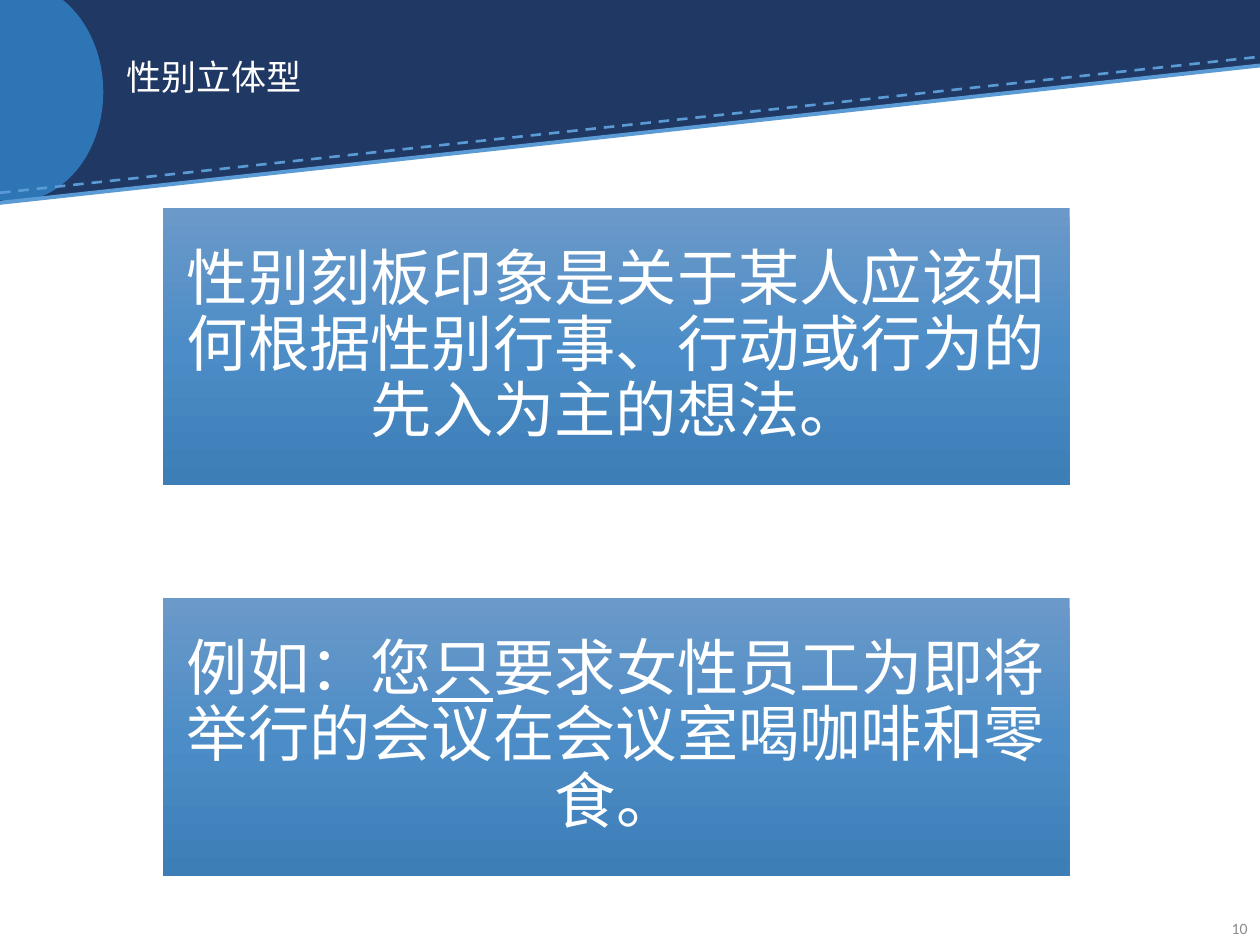
import copy
from dataclasses import dataclass

import pptx
import pptx.dml.color
import pptx.enum.dml
import pptx.enum.shapes
import pptx.enum.text
import pptx.oxml.ns
import pptx.util
from lxml import etree

Inches = pptx.util.Inches
Kind = pptx.enum.shapes.MSO_SHAPE
Align = pptx.enum.text.PP_ALIGN
Anchor = pptx.enum.text.MSO_ANCHOR
qn = pptx.oxml.ns.qn


@dataclass(frozen=True)
class Theme:
    navy: str = "203864"
    blue: str = "2E75B6"
    sky: str = "5B9BD5"
    white: str = "FFFFFF"
    gray: str = "8C8C8C"
    shades: tuple = ("6B99C9", "4D8DC7", "3E7EB7")
    font: str = "Noto Sans CJK SC"
    latin: str = "Calibri"
    title: float = 20
    body: float = 35
    small: float = 9


@dataclass(frozen=True)
class Box:
    left: float
    top: float
    width: float
    height: float

    def sides(self) -> tuple:
        return tuple(Inches(v) for v in (self.left, self.top, self.width, self.height))


@dataclass(frozen=True)
class Block:
    kind: int
    box: Box
    color: str
    flip: bool = False


@dataclass(frozen=True)
class Rule:
    start: float
    end: float
    weight: float
    dashed: bool = False


@dataclass(frozen=True)
class Panel:
    top: float
    words: tuple
    marked: str = ""


THEME = Theme()

BLOCKS = (
    Block(Kind.RECTANGLE, Box(0, 0, 10, 0.52), THEME.navy),
    Block(Kind.RIGHT_TRIANGLE, Box(0, 0.51, 10, 1.09), THEME.navy, True),
    Block(Kind.OVAL, Box(-0.59, -0.14, 1.41, 1.74), THEME.blue),
)
RULES = (Rule(1.53, 0.45, 1.5, True), Rule(1.61, 0.52, 2.25))
PANELS = (
    Panel(1.65, ("性别刻板印象是关于某人应该如何根据性别行事、行动或行为的先入为主的想法。",)),
    Panel(4.75, ("例如：您", "只", "要求女性员工为即将举行的会议在会议室喝咖啡和零食。"), "只"),
)


def paint(text: str) -> pptx.dml.color.RGBColor:
    return pptx.dml.color.RGBColor.from_string(text)


def style(run, size: float, color: str, face: str = THEME.font) -> None:
    run.font.size = pptx.util.Pt(size)
    run.font.color.rgb = paint(color)
    run.font.name = face
    etree.SubElement(run.font._element, qn("a:ea")).set("typeface", face)


def add_block(slide, block: Block) -> None:
    shape = slide.shapes.add_shape(block.kind, *block.box.sides())
    shape.shadow.inherit = False
    shape.fill.solid()
    shape.fill.fore_color.rgb = paint(block.color)
    shape.line.fill.background()
    if block.flip:
        shape.element.spPr.find(qn("a:xfrm")).set("flipV", "1")


def add_rule(slide, rule: Rule) -> None:
    line = slide.shapes.add_connector(
        pptx.enum.shapes.MSO_CONNECTOR.STRAIGHT,
        Inches(0), Inches(rule.start), Inches(10), Inches(rule.end))
    line.line.color.rgb = paint(THEME.sky)
    line.line.width = pptx.util.Pt(rule.weight)
    if rule.dashed:
        line.line.dash_style = pptx.enum.dml.MSO_LINE.DASH
    etree.SubElement(line.element.spPr, qn("a:effectLst"))


def shade(fill) -> None:
    fill.gradient()
    fill.gradient_angle = 270
    first = fill.gradient_stops[0]._gs
    first.addnext(copy.deepcopy(first))
    for stop, color, place in zip(fill.gradient_stops, THEME.shades, (0, 0.5, 1)):
        stop.color.rgb = paint(color)
        stop.position = place


def add_panel(slide, panel: Panel) -> None:
    box = Box(1.29, panel.top, 7.2, 2.2)
    shape = slide.shapes.add_shape(Kind.RECTANGLE, *box.sides())
    shape.shadow.inherit = False
    shape.line.fill.background()
    shade(shape.fill)
    frame = shape.text_frame
    frame.word_wrap = True
    frame.vertical_anchor = Anchor.MIDDLE
    frame.margin_left = frame.margin_right = Inches(0.02)
    frame.margin_top = frame.margin_bottom = Inches(0.02)
    para = frame.paragraphs[0]
    para.alignment = Align.CENTER
    para.line_spacing = 0.9
    for word in panel.words:
        run = para.add_run()
        run.text = word
        style(run, THEME.body, THEME.white)
        if word == panel.marked:
            run.font.underline = True


def set_title(slide, text: str) -> None:
    title = slide.shapes.title
    title.left, title.top, title.width, title.height = Box(0.9, 0.2, 8.05, 0.86).sides()
    frame = title.text_frame
    frame.text = text
    frame.word_wrap = True
    frame.auto_size = pptx.enum.text.MSO_AUTO_SIZE.NONE
    frame.vertical_anchor = Anchor.MIDDLE
    para = frame.paragraphs[0]
    para.alignment = Align.LEFT
    para.line_spacing = 0.9
    style(para.runs[0], THEME.title, THEME.white)
    slide.shapes.element.append(title.element)


def add_number(slide, text: str) -> None:
    label = slide.shapes.add_textbox(*Box(9.47, 7.17, 0.53, 0.4).sides())
    frame = label.text_frame
    frame.text = text
    frame.word_wrap = True
    frame.vertical_anchor = Anchor.MIDDLE
    para = frame.paragraphs[0]
    para.alignment = Align.RIGHT
    para.space_after = pptx.util.Pt(6)
    style(para.runs[0], THEME.small, THEME.gray, THEME.latin)


def main() -> None:
    deck = pptx.Presentation()
    deck.slide_width, deck.slide_height = Inches(10), Inches(7.5)
    slide = deck.slides.add_slide(deck.slide_layouts[5])
    for block in BLOCKS:
        add_block(slide, block)
    for rule in RULES:
        add_rule(slide, rule)
    set_title(slide, "性别立体型")
    add_number(slide, "10")
    for panel in PANELS:
        add_panel(slide, panel)
    deck.save("out.pptx")


if __name__ == "__main__":
    main()
